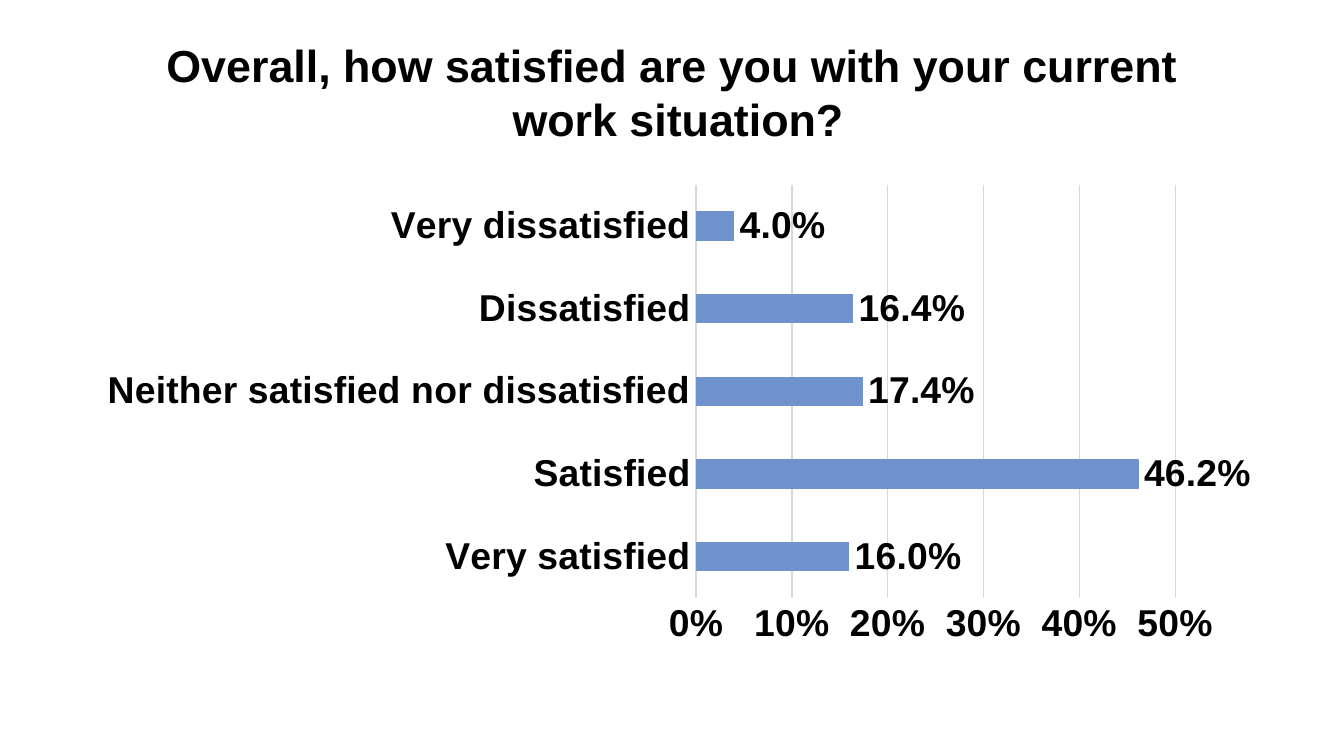
from lxml import etree
from pptx import Presentation, util as u
from pptx.chart.data import CategoryChartData
from pptx.dml.color import RGBColor
from pptx.enum import chart as ch, text
from pptx.oxml.ns import qn

COLORS = {"ink": "000000", "bar": "7093CD", "grid": "D9D9D9", "back": "FFFFFF"}
SHARES = {
    "Very satisfied": 0.16,
    "Satisfied": 0.462,
    "Neither satisfied nor dissatisfied": 0.174,
    "Dissatisfied": 0.164,
    "Very dissatisfied": 0.04,
}


def color(name):
    return RGBColor.from_string(COLORS[name])


def style(font, size):
    font.name, font.size, font.bold = "Arial", u.Pt(size), True
    font.color.rgb = color("ink")


deck = Presentation()
deck.slide_width = u.Inches(10)
deck.slide_height = deck.slide_width * 9 // 16
col, row = deck.slide_width / 100, deck.slide_height / 100
slide = deck.slides.add_slide(deck.slide_layouts[5])
slide.background.fill.solid()
slide.background.fill.fore_color.rgb = color("back")

# Title
title = slide.shapes.title
title.left, title.top = int(4.1 * col), int(2.9 * row)
title.width, title.height = int(92.7 * col), int(17.25 * row)
frame = title.text_frame
frame.text = "Overall, how satisfied are you with your current \vwork situation?"
frame.word_wrap = True
frame.auto_size = text.MSO_AUTO_SIZE.NONE
frame.vertical_anchor = text.MSO_ANCHOR.BOTTOM
para = frame.paragraphs[0]
para.alignment = text.PP_ALIGN.CENTER
style(para.font, 24)
for run in para.runs:
    style(run.font, 24)

# Bar chart
data = CategoryChartData(number_format="0.0%")
data.categories = list(SHARES)
data.add_series("Series 1", list(SHARES.values()))
chart = slide.shapes.add_chart(
    ch.XL_CHART_TYPE.BAR_CLUSTERED,
    int(6.9 * col), int(23.1 * row), int(86.2 * col), int(63.5 * row), data,
).chart
chart.has_title = chart.has_legend = False
style(chart.font, 20)

plot = chart.plots[0]
plot.gap_width = 182
plot.vary_by_categories = False
bars = plot.series[0]
bars.format.fill.solid()
bars.format.fill.fore_color.rgb = color("bar")
labels = bars.data_labels
labels.show_value = True
labels.number_format, labels.number_format_is_linked = "0.0%", False
labels.position = ch.XL_LABEL_POSITION.OUTSIDE_END
style(labels.font, 20)

# Axes
cats, vals = chart.category_axis, chart.value_axis
for axis in (cats, vals):
    axis.major_tick_mark = axis.minor_tick_mark = ch.XL_TICK_MARK.NONE
    style(axis.tick_labels.font, 20)
cats.has_major_gridlines = False
vals.has_major_gridlines = True
for line in (cats.format.line, vals.major_gridlines.format.line):
    line.color.rgb = color("grid")
    line.width = u.Pt(0.75)
vals.format.line.fill.background()
vals.minimum_scale, vals.maximum_scale, vals.major_unit = 0, 0.5, 0.1
vals.tick_labels.number_format = "0%"
vals.tick_labels.number_format_is_linked = False

# Inner plot area, in percent of the chart
area = chart.element.find(".//" + qn("c:plotArea"))
layout = area.find(qn("c:layout"))
if layout is None:
    layout = etree.Element(qn("c:layout"))
    area.insert(0, layout)
manual = etree.SubElement(layout, qn("c:manualLayout"))
for tag, val in (("layoutTarget", "inner"), ("xMode", "edge"), ("yMode", "edge")):
    etree.SubElement(manual, qn("c:" + tag)).set("val", val)
for tag, val in (("x", 52.15), ("y", 2.1), ("w", 41.4), ("h", 86.1)):
    etree.SubElement(manual, qn("c:" + tag)).set("val", str(val / 100))

deck.save("out.pptx")
